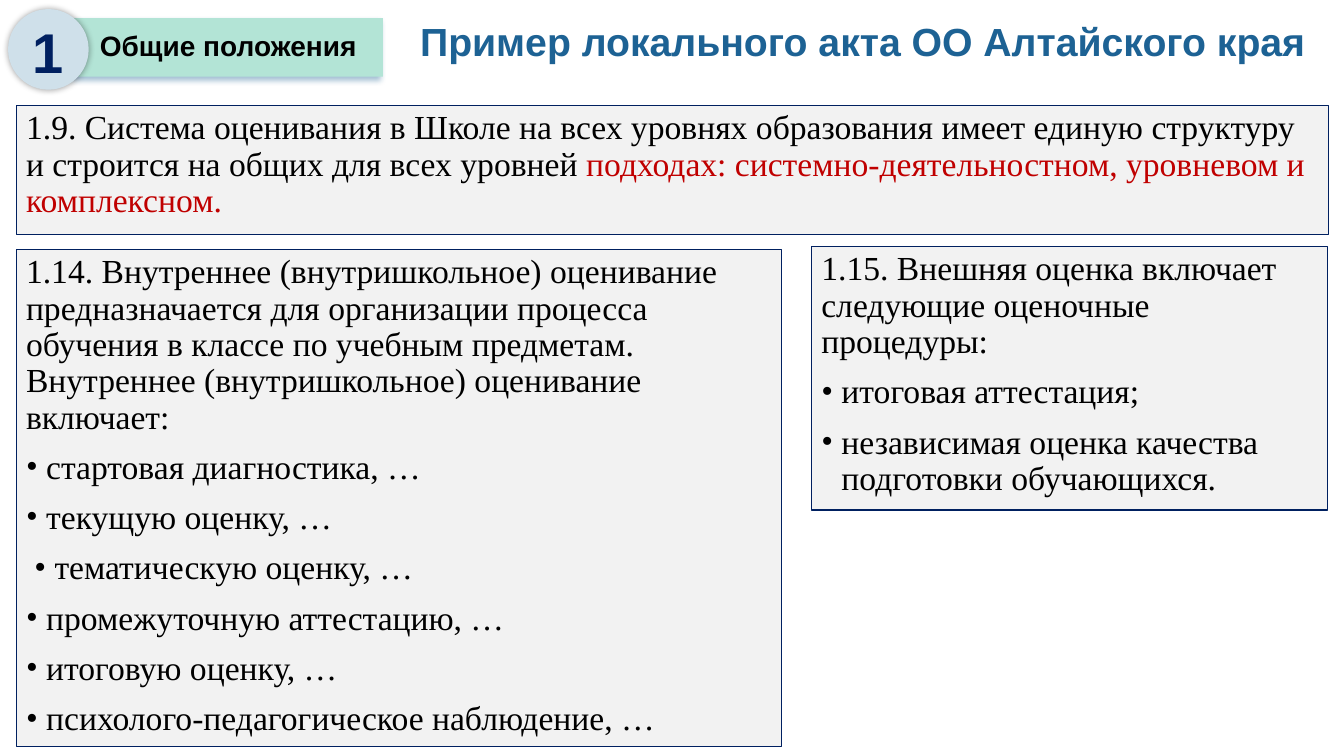
from dataclasses import dataclass

from lxml import etree
from pptx import Presentation
from pptx.dml.color import RGBColor
from pptx.enum.shapes import MSO_SHAPE
from pptx.enum.text import MSO_ANCHOR, PP_ALIGN
from pptx.oxml.ns import qn
from pptx.util import Inches, Pt

RECT, OVAL = MSO_SHAPE.RECTANGLE, MSO_SHAPE.OVAL
TOP, MIDDLE = MSO_ANCHOR.TOP, MSO_ANCHOR.MIDDLE
LEFT, CENTER = PP_ALIGN.LEFT, PP_ALIGN.CENTER
WIDE, HIGH = Inches(13.33), Inches(7.5)
COLS, ROWS = 160, 90
NAVY, BLACK, RED = "002060", "000000", "C00000"
SANS, SERIF = "Arial", "Times New Roman"


@dataclass
class Area:
    col: float
    row: float
    cols: float
    rows: float

    def place(self) -> tuple[int, int, int, int]:
        return (int(WIDE * self.col / COLS), int(HIGH * self.row / ROWS),
                int(WIDE * self.cols / COLS), int(HIGH * self.rows / ROWS))


@dataclass
class Label:
    area: Area
    text: str
    size: int
    color: str
    align: int = CENTER
    anchor: int = TOP
    pitch: float = 0.9


@dataclass
class Badge:
    area: Area
    form: int
    fill: str
    shade: str
    blur: int
    dist: int
    angle: int


@dataclass
class Item:
    text: str
    accent: str = ""
    indent: float = 0


@dataclass
class Panel:
    area: Area
    items: list[Item]


HANG = 2.4
BADGES = [
    Badge(Area(8.76, 2.16, 36.84, 6.96), RECT, "B3E4D6", "1D6294", 4, 3, 135),
    Badge(Area(0.96, 1.08, 9.6, 9.6), OVAL, "CFE0EA", BLACK, 5, 0, 0),
]
LABELS = [
    Label(Area(48.84, 0, 111.1, 10.32),
          "Пример локального акта ОО Алтайского края",
          28, "1D6294", LEFT, MIDDLE),
    Label(Area(0.96, 1.44, 9.6, 9.24), "1", 40, NAVY, pitch=1.0),
    Label(Area(8.76, 3.24, 36.84, 11.76), "Общие положения", 20, BLACK),
]
PANELS = [
    Panel(Area(1.92, 12.6, 156.24, 15.36), [
        Item("1.9. Система оценивания в Школе на всех уровнях образования "
             "имеет единую структуру и строится на общих для всех уровней ",
             "подходах: системно-деятельностном, уровневом и комплексном."),
    ]),
    Panel(Area(1.92, 29.76, 91.08, 59.16), [
        Item("1.14. Внутреннее (внутришкольное) оценивание предназначается "
             "для организации процесса обучения в классе по учебным "
             "предметам. Внутреннее (внутришкольное) оценивание включает:"),
        Item("стартовая диагностика, …", indent=HANG),
        Item("текущую оценку, …", indent=HANG),
        Item("тематическую оценку, …", indent=HANG + 1),
        Item("промежуточную аттестацию, …", indent=HANG),
        Item("итоговую оценку, …", indent=HANG),
        Item("психолого-педагогическое наблюдение, …", indent=HANG),
    ]),
    Panel(Area(96.6, 29.4, 61.44, 31.32), [
        Item("1.15. Внешняя оценка включает следующие оценочные процедуры:"),
        Item("итоговая аттестация;", indent=HANG),
        Item("независимая оценка качества подготовки обучающихся.",
             indent=HANG),
    ]),
]


def paint(color: str) -> RGBColor:
    return RGBColor.from_string(color)


def style(para, face: str, size: int, color: str, bold: bool) -> None:
    para.font.name = face
    para.font.size = Pt(size)
    para.font.bold = bold
    para.font.color.rgb = paint(color)


def solid(slide, form: int, area: Area, fill: str):
    shape = slide.shapes.add_shape(form, *area.place())
    shape.shadow.inherit = False
    shape.fill.solid()
    shape.fill.fore_color.rgb = paint(fill)
    return shape


def add_badge(slide, badge: Badge) -> None:
    shape = solid(slide, badge.form, badge.area, badge.fill)
    shape.line.fill.background()
    effects = shape.element.spPr.find(qn("a:effectLst"))
    shade = etree.SubElement(
        effects, qn("a:outerShdw"), blurRad=str(Pt(badge.blur)),
        dist=str(Pt(badge.dist)), dir=str(badge.angle * 60000),
        algn="ctr", rotWithShape="0")
    color = etree.SubElement(shade, qn("a:srgbClr"), val=badge.shade)
    etree.SubElement(color, qn("a:alpha"), val="40000")


def add_label(slide, label: Label) -> None:
    frame = slide.shapes.add_textbox(*label.area.place()).text_frame
    frame.word_wrap = True
    frame.vertical_anchor = label.anchor
    para = frame.paragraphs[0]
    para.text = label.text
    para.alignment = label.align
    para.line_spacing = label.pitch
    style(para, SANS, label.size, label.color, True)


def add_bullet(para, indent: float) -> None:
    props = para._p.get_or_add_pPr()
    props.set("marL", str(int(WIDE * indent / COLS)))
    props.set("indent", str(-int(WIDE * HANG / COLS)))
    etree.SubElement(props, qn("a:buFont"), typeface=SERIF)
    etree.SubElement(props, qn("a:buChar"), char="•")


def add_panel(slide, panel: Panel) -> None:
    shape = solid(slide, RECT, panel.area, "F2F2F2")
    shape.line.color.rgb = paint(NAVY)
    shape.line.width = Pt(0.75)
    frame = shape.text_frame
    frame.word_wrap = True
    frame.vertical_anchor = TOP
    for rank, item in enumerate(panel.items):
        para = frame.add_paragraph() if rank else frame.paragraphs[0]
        para.alignment = LEFT
        para.line_spacing = 0.9
        if rank:
            para.space_before = Pt(10)
        if item.indent:
            add_bullet(para, item.indent)
        style(para, SERIF, 24, BLACK, False)
        para.add_run().text = item.text
        if item.accent:
            run = para.add_run()
            run.text = item.accent
            run.font.color.rgb = paint(RED)


def main() -> None:
    deck = Presentation()
    deck.slide_width, deck.slide_height = WIDE, HIGH
    slide = deck.slides.add_slide(deck.slide_layouts[6])
    for panel in PANELS:
        add_panel(slide, panel)
    for badge in BADGES:
        add_badge(slide, badge)
    for label in LABELS:
        add_label(slide, label)
    deck.save("out.pptx")


if __name__ == "__main__":
    main()
